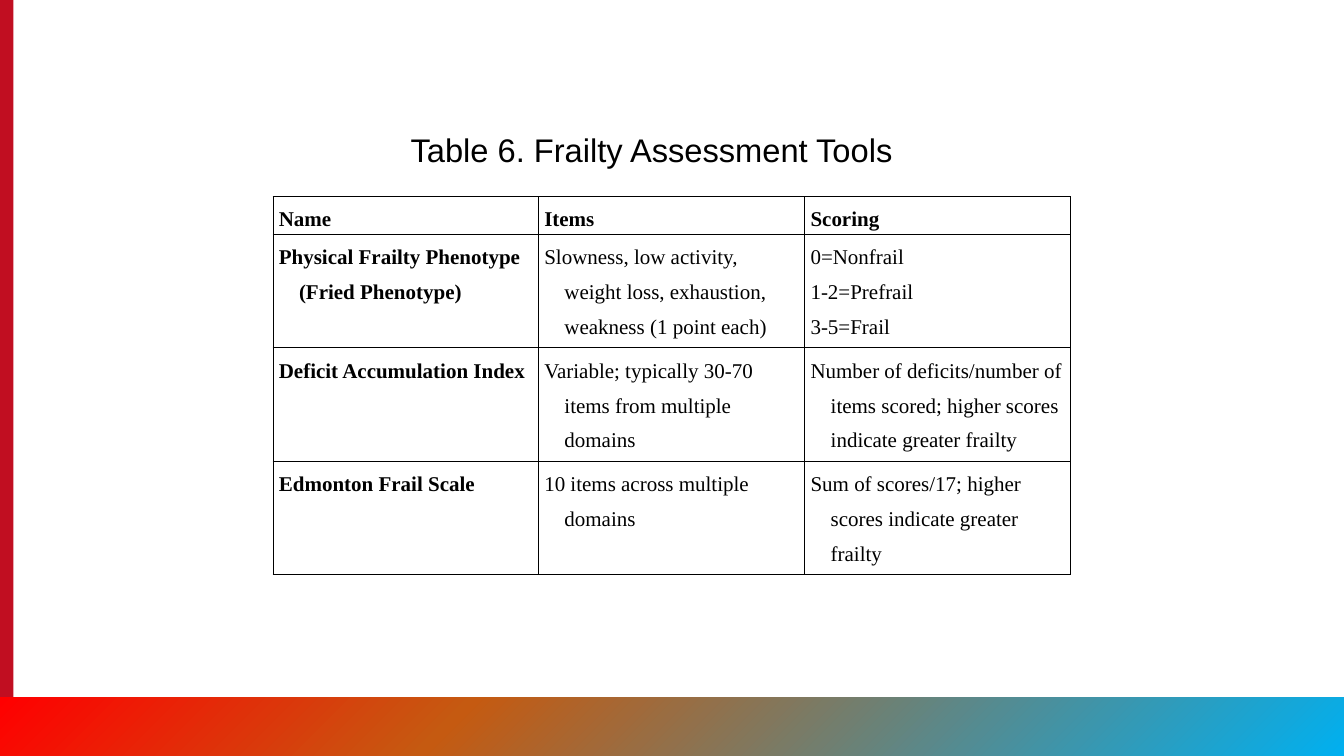
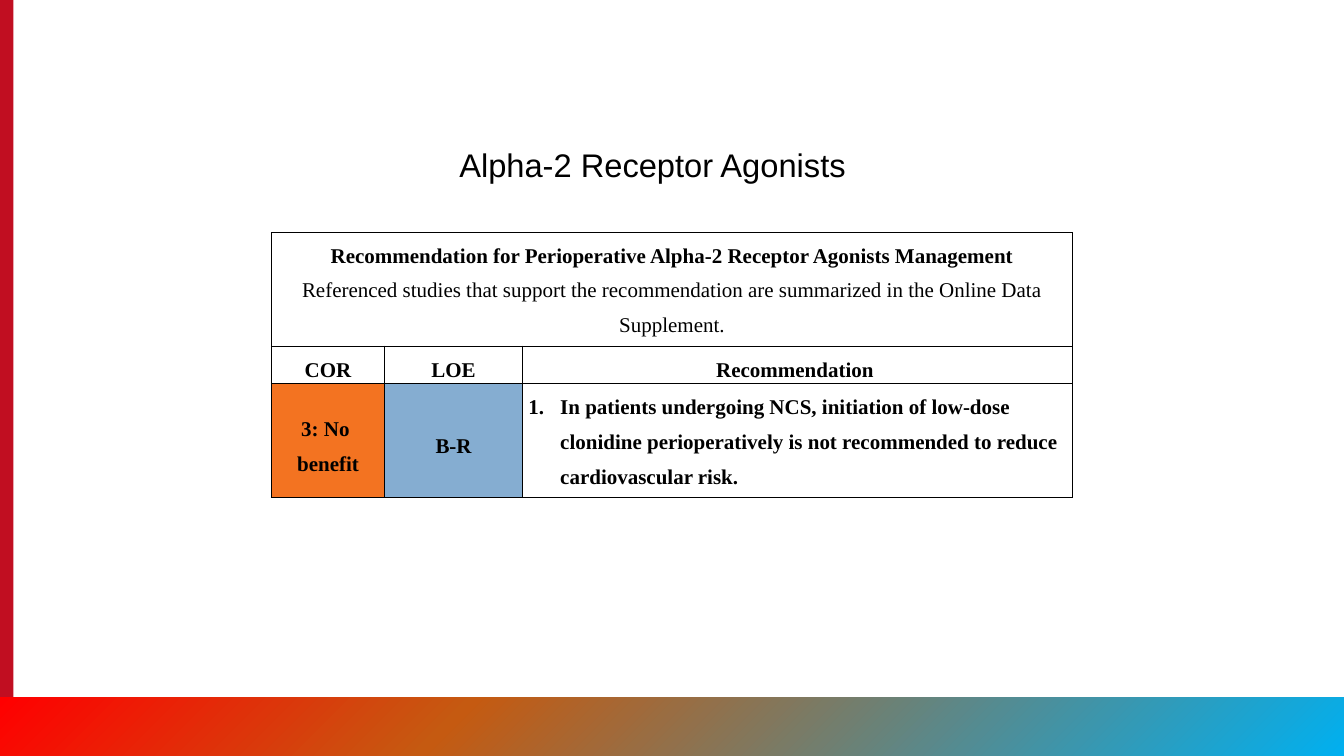
import pptx
import pptx.dml.color
import pptx.enum.shapes
import pptx.enum.text
import pptx.oxml
import pptx.oxml.ns
import pptx.util

Inches = pptx.util.Inches
Pt = pptx.util.Pt
PP_ALIGN = pptx.enum.text.PP_ALIGN
MSO_ANCHOR = pptx.enum.text.MSO_ANCHOR

COLORS = {
    "text": "000000",
    "border": "000000",
    "strip": "C10E21",
    "no_benefit": "F37321",
    "evidence": "85ADD1",
    "band_blue": "00B0F0",
    "band_brown": "C55A11",
    "band_red": "FF0000",
}
BAND_STOPS = [(0, "band_blue"), (66, "band_brown"), (100, "band_red")]
HANGING = (0.24, -0.25)
NUMBERED = (0.38, -0.38)


def rgb(name):
    return pptx.dml.color.RGBColor.from_string(COLORS[name])


def xml(tag, attrs="", inner=""):
    return pptx.oxml.parse_xml(
        f"<a:{tag} {pptx.oxml.ns.nsdecls('a')} {attrs}>{inner}</a:{tag}>"
    )


def add_text(tf, text, font="Times New Roman", size=18, bold=False, align=PP_ALIGN.LEFT,
             spacing=1.5, indent=(0, 0), numbered=False):
    for line in text.split("\n"):
        p = tf.paragraphs[0] if not tf.text else tf.add_paragraph()
        p.alignment = align
        p.line_spacing = spacing
        pPr = p._p.get_or_add_pPr()
        pPr.set("marL", str(Inches(indent[0])))
        pPr.set("indent", str(Inches(indent[1])))
        if numbered:
            pPr.append(xml("buAutoNum", 'type="arabicPeriod"'))
        r = p.add_run()
        r.text = line
        r.font.name = font
        r.font.size = Pt(size)
        r.font.bold = bold
        r.font.color.rgb = rgb("text")


class Deck:
    def __init__(self):
        self.prs = pptx.Presentation()
        self.prs.slide_width = Inches(16)
        self.prs.slide_height = Inches(9)
        self.s = None

    def slide(self):
        self.s = self.prs.slides.add_slide(self.prs.slide_layouts[6])
        strip = self.rect(0, 0, 0.16, 9)
        strip.fill.solid()
        strip.fill.fore_color.rgb = rgb("strip")
        band = self.rect(0, 8.3, 16, 0.7)
        band.rotation = 180
        stops = "".join(
            f'<a:gs pos="{pos * 1000}"><a:srgbClr val="{COLORS[name]}"/></a:gs>'
            for pos, name in BAND_STOPS
        )
        grad = xml("gradFill", 'rotWithShape="1"',
                   f'<a:gsLst>{stops}</a:gsLst><a:lin ang="2700000" scaled="0"/>')
        band._element.spPr.find(pptx.oxml.ns.qn("a:prstGeom")).addnext(grad)

    def rect(self, x, y, w, h):
        sp = self.s.shapes.add_shape(pptx.enum.shapes.MSO_SHAPE.RECTANGLE,
                                     Inches(x), Inches(y), Inches(w), Inches(h))
        sp.shadow.inherit = False
        sp.line.fill.background()
        return sp

    def title(self, text, x, y, w):
        sp = self.s.shapes.add_textbox(Inches(x), Inches(y), Inches(w), Inches(0.57))
        sp.text_frame.word_wrap = True
        add_text(sp.text_frame, text, font="Arial", size=28, spacing=1)

    def table(self, x, y, widths, heights):
        frame = self.s.shapes.add_table(len(heights), len(widths), Inches(x), Inches(y),
                                        Inches(sum(widths)), Inches(sum(heights)))
        table = frame.table
        table.horz_banding = False
        for col, width in zip(table.columns, widths):
            col.width = Inches(width)
        for row, height in zip(table.rows, heights):
            row.height = Inches(height)
        for cell in table.iter_cells():
            self.style_cell(cell)
        return table

    def style_cell(self, cell):
        cell.margin_left = cell.margin_right = Inches(0.07)
        cell.margin_top = cell.margin_bottom = 0
        cell.fill.background()
        tcPr = cell._tc.get_or_add_tcPr()
        line = f'<a:solidFill><a:srgbClr val="{COLORS["border"]}"/></a:solidFill>'
        for i, side in enumerate("LRTB"):
            tcPr.insert(i, xml("ln" + side, f'w="{Pt(1)}"', line))

    def cell(self, cell, text, fill=None, anchor=MSO_ANCHOR.TOP, **fmt):
        cell.vertical_anchor = anchor
        if fill:
            cell.fill.solid()
            cell.fill.fore_color.rgb = rgb(fill)
        add_text(cell.text_frame, text, **fmt)


def frailty_slide(deck):
    deck.slide()
    deck.title("Table 6. Frailty Assessment Tools", 4.79, 1.5, 6.42)
    rows = [
        ("Name", "Items", "Scoring"),
        ("Physical Frailty Phenotype (Fried Phenotype)",
         "Slowness, low activity, weight loss, exhaustion, weakness (1 point each)",
         "0=Nonfrail\n1-2=Prefrail\n3-5=Frail"),
        ("Deficit Accumulation Index",
         "Variable; typically 30-70 items from multiple domains",
         "Number of deficits/number of items scored; higher scores indicate greater frailty"),
        ("Edmonton Frail Scale",
         "10 items across multiple domains",
         "Sum of scores/17; higher scores indicate greater frailty"),
    ]
    table = deck.table(3.25, 2.34, [3.16, 3.17, 3.17], [0.45, 1.35, 1.35, 1.35])
    for i, row in enumerate(rows):
        for j, text in enumerate(row):
            deck.cell(table.cell(i, j), text, bold=i == 0 or j == 0, indent=HANGING)


def agonists_slide(deck):
    deck.slide()
    deck.title("Alpha-2 Receptor Agonists", 5.37, 1.67, 5.27)
    table = deck.table(3.23, 2.77, [1.35, 1.64, 6.55], [1.35, 0.45, 1.35])
    heading = table.cell(0, 0)
    heading.merge(table.cell(0, 2))
    deck.cell(heading, "Recommendation for Perioperative Alpha-2 Receptor Agonists Management",
              bold=True, align=PP_ALIGN.CENTER)
    deck.cell(heading, "Referenced studies that support the recommendation are summarized "
              "in the Online Data Supplement.", align=PP_ALIGN.CENTER)
    centered = dict(bold=True, align=PP_ALIGN.CENTER, anchor=MSO_ANCHOR.MIDDLE, indent=HANGING)
    for j, text in enumerate(["COR", "LOE", "Recommendation "]):
        deck.cell(table.cell(1, j), text, **centered)
    deck.cell(table.cell(2, 0), "3: No \nbenefit", fill="no_benefit", **centered)
    deck.cell(table.cell(2, 1), "B-R", fill="evidence", **centered)
    deck.cell(table.cell(2, 2), "In patients undergoing NCS, initiation of low-dose clonidine "
              "perioperatively is not recommended to reduce cardiovascular risk.",
              bold=True, indent=NUMBERED, numbered=True)


def main():
    deck = Deck()
    frailty_slide(deck)
    agonists_slide(deck)
    deck.prs.save("out.pptx")


if __name__ == "__main__":
    main()
